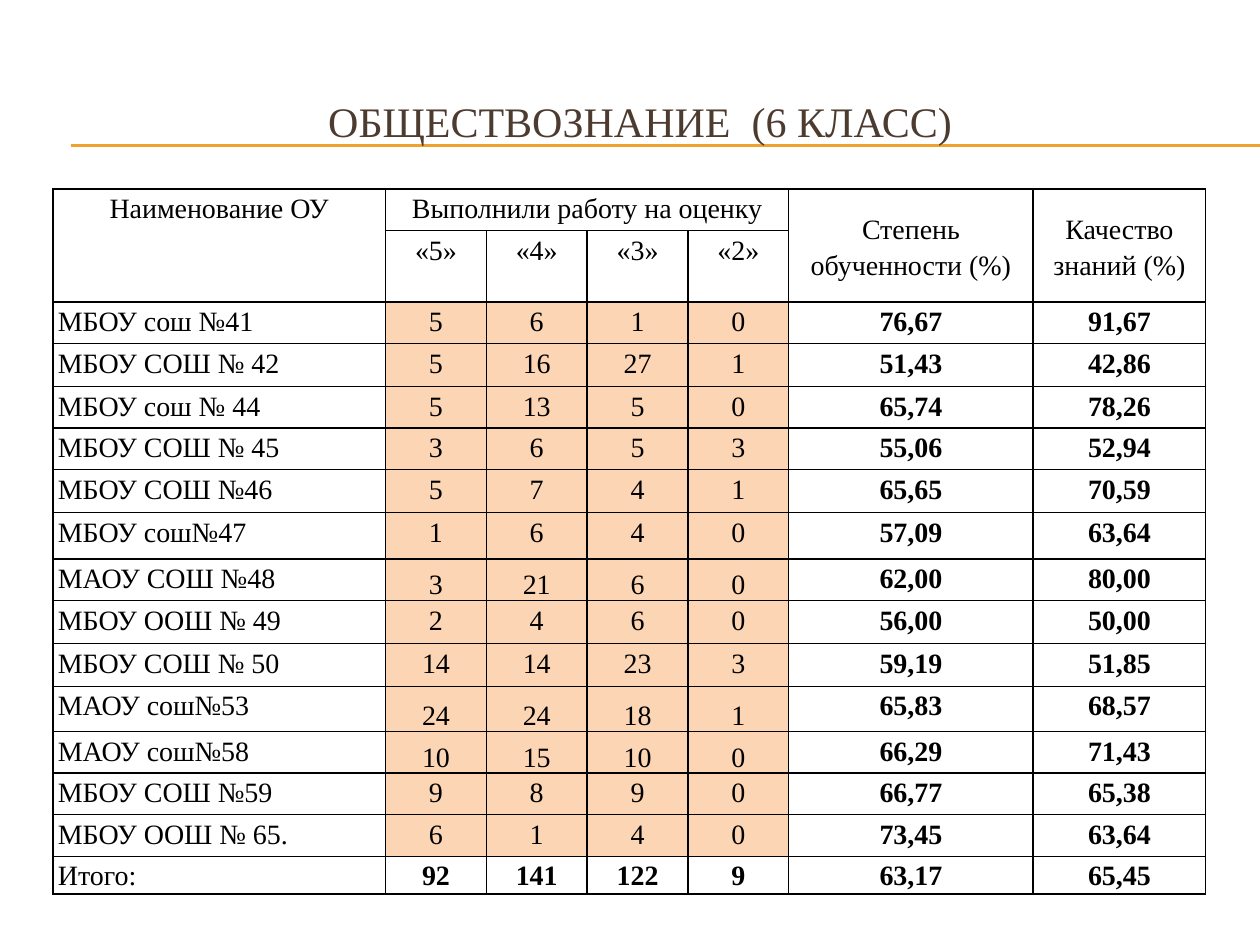
from lxml.etree import SubElement
from pptx import Presentation
from pptx.dml.color import RGBColor
from pptx.enum.shapes import MSO_CONNECTOR
from pptx.enum.text import MSO_ANCHOR, PP_ALIGN
from pptx.oxml import parse_xml
from pptx.oxml.ns import nsdecls, qn
from pptx.util import Inches, Pt

COLORS = {"title": "4E3B30", "rule": "F0A22E", "text": "000000",
          "name": "FFFFFF", "grade": "FCD5B4", "border": "000000"}
FONT = "Times New Roman"


def write(tf, text, size, color, align, bold=False, spacing=1.0):
    p = tf.paragraphs[0]
    p.alignment = align
    p.line_spacing = spacing
    r = p.add_run()
    r.text = text
    for key, value in {"name": FONT, "size": Pt(size), "bold": bold}.items():
        setattr(r.font, key, value)
    r.font.color.rgb = RGBColor.from_string(COLORS[color])


def add_borders(cell):
    tcPr = cell._tc.get_or_add_tcPr()
    for i, side in enumerate(("lnL", "lnR", "lnT", "lnB")):
        tcPr.insert(i, parse_xml(
            f'<a:{side} {nsdecls("a")} w="{Pt(1)}"><a:solidFill>'
            f'<a:srgbClr val="{COLORS["border"]}"/></a:solidFill></a:{side}>'))


prs = Presentation()
prs.slide_width, prs.slide_height = Inches(10), Inches(7.5)
s = prs.slides.add_slide(prs.slide_layouts[5])

# Double rule under the title
for y in (1.15, 1.16):
    rule = s.shapes.add_connector(MSO_CONNECTOR.STRAIGHT, Inches(0.56), Inches(y),
                                  Inches(10), Inches(y))
    rule.line.color.rgb = RGBColor.from_string(COLORS["rule"])
    rule.line.width = Pt(0.75)
    SubElement(rule._element.spPr, qn("a:effectLst"))

# Title, in front of the rule
title = s.shapes.title
s.shapes._spTree.append(title._element)
title.left, title.top, title.width, title.height = map(Inches, (0.33, 0.5, 9.5, 0.92))
title.text_frame.vertical_anchor = MSO_ANCHOR.MIDDLE
write(title.text_frame, "ОБЩЕСТВОЗНАНИЕ  (6 КЛАСС)", 24, "title", PP_ALIGN.CENTER)

# Table contents: None marks a cell covered by a merged one
rows = [
    ("Наименование ОУ", "Выполнили работу на оценку", None, None, None,
     "Степень обученности (%)", "Качество знаний (%)"),
    (None, "«5»", "«4»", "«3»", "«2»", None, None),
    ("МБОУ сош №41", 5, 6, 1, 0, "76,67", "91,67"),
    ("МБОУ СОШ № 42", 5, 16, 27, 1, "51,43", "42,86"),
    ("МБОУ сош № 44", 5, 13, 5, 0, "65,74", "78,26"),
    ("МБОУ СОШ № 45", 3, 6, 5, 3, "55,06", "52,94"),
    ("МБОУ СОШ №46", 5, 7, 4, 1, "65,65", "70,59"),
    ("МБОУ сош№47", 1, 6, 4, 0, "57,09", "63,64"),
    ("МАОУ СОШ №48", 3, 21, 6, 0, "62,00", "80,00"),
    ("МБОУ ООШ № 49", 2, 4, 6, 0, "56,00", "50,00"),
    ("МБОУ СОШ № 50", 14, 14, 23, 3, "59,19", "51,85"),
    ("МАОУ сош№53", 24, 24, 18, 1, "65,83", "68,57"),
    ("МАОУ сош№58", 10, 15, 10, 0, "66,29", "71,43"),
    ("МБОУ СОШ №59", 9, 8, 9, 0, "66,77", "65,38"),
    ("МБОУ ООШ № 65.", 6, 1, 4, 0, "73,45", "63,64"),
    ("Итого:", 92, 141, 122, 9, "63,17", "65,45"),
]
col_widths = [2.64] + [0.8] * 4 + [1.94, 1.37]
row_heights = [0.33, 0.34, 0.33, 0.34, 0.33, 0.33, 0.34, 0.37,
               0.33, 0.34, 0.34, 0.36, 0.33, 0.33, 0.33, 0.3]
HEADER_ROWS, TOTAL_ROW = 2, len(rows) - 1
LOW_GRADE_ROWS = (8, 11, 12)  # grades sit at the bottom of the cell

# Table grid
frame = s.shapes.add_table(len(rows), len(col_widths), Inches(0.42), Inches(1.5),
                           Inches(9.17), Inches(5.38))
table = frame.table
table.first_row = table.horz_banding = False
for col, width in zip(table.columns, col_widths):
    col.width = Inches(width)
for row, height in zip(table.rows, row_heights):
    row.height = Inches(height)
for first, last in (((0, 0), (1, 0)), ((0, 1), (0, 4)), ((0, 5), (1, 5)), ((0, 6), (1, 6))):
    table.cell(*first).merge(table.cell(*last))

# Table cells
for i, values in enumerate(rows):
    header, body = i < HEADER_ROWS, HEADER_ROWS <= i < TOTAL_ROW
    for j, value in enumerate(values):
        cell = table.cell(i, j)
        is_grade = 1 <= j <= 4
        if body and j <= 4:
            cell.fill.solid()
            cell.fill.fore_color.rgb = RGBColor.from_string(
                COLORS["grade" if is_grade else "name"])
        else:
            cell.fill.background()
        add_borders(cell)
        if value is None:
            continue

        anchor = MSO_ANCHOR.TOP
        if header and j >= 5:
            anchor = MSO_ANCHOR.MIDDLE
        elif is_grade and i in LOW_GRADE_ROWS:
            anchor = MSO_ANCHOR.BOTTOM
        for key, setting in {"margin_left": Inches(0.04), "margin_right": Inches(0.04),
                             "margin_top": 0, "margin_bottom": 0,
                             "vertical_anchor": anchor}.items():
            setattr(cell, key, setting)
        bold = not header and (j >= 5 or (i == TOTAL_ROW and j > 0))
        align = PP_ALIGN.CENTER if header or j else PP_ALIGN.LEFT
        write(cell.text_frame, str(value), 16, "text", align, bold, 1.15)

prs.save("out.pptx")
